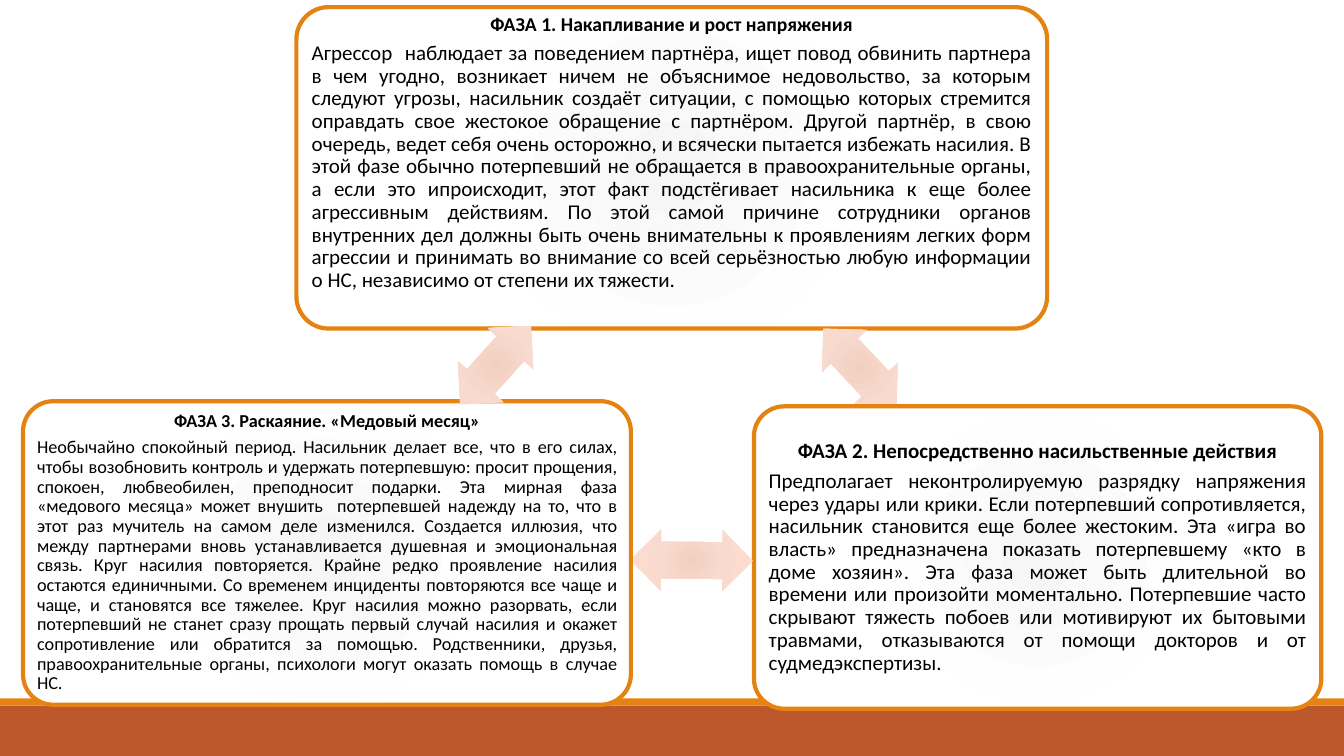
from lxml import etree
from pptx import Presentation
from pptx.dml.color import RGBColor
from pptx.enum import shapes, text
from pptx.oxml import ns
from pptx.util import Cm, Pt

THEME = {
    "font": "Calibri", "ink": "000000", "edge": "E48312", "base": "BD582C",
    "card": [(0, "F6F6F6"), (45, "FEFEFE"), (100, "FFFFFF")],
    "arrow": [(0, "F2D0C1"), (45, "F8DACE"), (100, "FDDDD0")],
    "line": 3,
    "sizes": {"build": (14, 15), "act": (15, 15), "calm": (13, 13)},
}
WIDE, HIGH = 33.87, 19.05
BARS = [("base", 17.78, 1.27), ("edge", 17.6, 0.18)]  # colour, top, height
THICK = 1.55  # arrow height

# Each phase: key, (left, top, width, height), (side inset, bottom inset), title, body
# Each arrow: centre x, centre y, length, angle; it follows its phase in the stack
CYCLE = [
    (("build", (7.47, 0.18, 18.92, 8.1), (0.15, 0.89),
      "ФАЗА 1. Накапливание и рост напряжения",
      "Агрессор  наблюдает за поведением партнёра, ищет повод обвинить партнера "
      "в чем угодно, возникает ничем не объяснимое недовольство, за которым "
      "следуют угрозы, насильник создаёт ситуации, с помощью которых стремится "
      "оправдать свое жестокое обращение с партнёром. Другой партнёр, в свою "
      "очередь, ведет себя очень осторожно, и всячески пытается избежать насилия. В "
      "этой фазе обычно потерпевший не обращается в правоохранительные органы, "
      "а если это ипроисходит, этот факт подстёгивает насильника к еще более "
      "агрессивным действиям. По этой самой причине сотрудники органов "
      "внутренних дел должны быть очень внимательны к проявлениям легких форм "
      "агрессии и принимать во внимание со всей серьёзностью любую информации о "
      "НС, независимо от степени их тяжести."),
     (21.67, 9.26, 2.69, 46.8)),
    (("act", (19, 10.24, 14.3, 7.62), (0.15, 0.15),
      "ФАЗА 2. Непосредственно насильственные действия",
      "Предполагает неконтролируемую разрядку напряжения "
      "через удары или крики. Если потерпевший сопротивляется, "
      "насильник становится еще более жестоким. Эта «игра во "
      "власть» предназначена показать потерпевшему «кто в "
      "доме хозяин». Эта фаза может быть длительной во "
      "времени или произойти моментально. Потерпевшие часто "
      "скрывают тяжесть побоев или мотивируют их бытовыми "
      "травмами, отказываются от помощи докторов и от "
      "судмедэкспертизы."),
     (17.43, 14.12, 3.1, 180.5)),
    (("calm", (0.58, 10.11, 15.32, 7.65), (0.13, 0.13),
      "ФАЗА 3. Раскаяние. «Медовый месяц»",
      "Необычайно спокойный период. Насильник делает все, что в его силах, "
      "чтобы возобновить контроль и удержать потерпевшую: просит прощения, "
      "спокоен, любвеобилен, преподносит подарки. Эта мирная фаза "
      "«медового месяца» может внушить  потерпевшей надежду на то, что в "
      "этот раз мучитель на самом деле изменился. Создается иллюзия, что "
      "между партнерами вновь устанавливается душевная и эмоциональная "
      "связь. Круг насилия повторяется. Крайне редко проявление насилия "
      "остаются единичными. Со временем инциденты повторяются все чаще и "
      "чаще, и становятся все тяжелее. Круг насилия можно разорвать, если "
      "потерпевший не станет сразу прощать первый случай насилия и окажет "
      "сопротивление или обратится за помощью. Родственники, друзья, "
      "правоохранительные органы, психологи могут оказать помощь в случае "
      "НС."),
     (12.49, 9.2, 2.67, 312)),
]


def tint(name):
    return RGBColor.from_string(THEME[name])


def add_form(slide, kind, box):
    form = slide.shapes.add_shape(kind, *map(Cm, box))
    form.shadow.inherit = False
    form.line.fill.background()
    form.fill.solid()
    return form


def glow(form, name):
    """Replace the solid fill with a round gradient."""
    old = form._element.spPr.find(ns.qn("a:solidFill"))
    grad = etree.Element(ns.qn("a:gradFill"), rotWithShape="1")
    stops = etree.SubElement(grad, ns.qn("a:gsLst"))
    for pos, hue in THEME[name]:
        stop = etree.SubElement(stops, ns.qn("a:gs"), pos=str(pos * 1000))
        etree.SubElement(stop, ns.qn("a:srgbClr"), val=hue)
    ring = etree.SubElement(grad, ns.qn("a:path"), path="circle")
    etree.SubElement(ring, ns.qn("a:fillToRect"),
                     {side: "100000" for side in "ltrb"})
    old.getparent().replace(old, grad)


def add_phase(slide, key, box, inset, title, body):
    card = add_form(slide, shapes.MSO_SHAPE.ROUNDED_RECTANGLE, box)
    card.adjustments[0] = 0.1
    glow(card, "card")
    card.line.color.rgb = tint("edge")
    card.line.width = Pt(THEME["line"])
    frame = card.text_frame
    frame.word_wrap = True
    frame.vertical_anchor = text.MSO_ANCHOR.MIDDLE
    side, base = map(Cm, inset)
    frame.margin_left = frame.margin_right = frame.margin_top = side
    frame.margin_bottom = base
    head, main = frame.paragraphs[0], frame.add_paragraph()
    big, small = THEME["sizes"][key]
    align = text.PP_ALIGN
    for para, words, size, way in ((head, title, big, align.CENTER),
                                   (main, body, small, align.JUSTIFY)):
        para.text = words
        para.alignment = way
        para.line_spacing = 0.9
        para.font.name = THEME["font"]
        para.font.size = Pt(size)
        para.font.bold = para is head
        para.font.color.rgb = tint("ink")
    head.space_after = Pt(round(big * 0.35, 1))


def add_arrow(slide, mid, level, length, angle):
    box = (mid - length / 2, level - THICK / 2, length, THICK)
    arrow = add_form(slide, shapes.MSO_SHAPE.LEFT_RIGHT_ARROW, box)
    arrow.adjustments[0], arrow.adjustments[1] = 0.6, 0.5
    arrow.rotation = angle
    glow(arrow, "arrow")


def main():
    deck = Presentation()
    deck.slide_width, deck.slide_height = Cm(WIDE), Cm(HIGH)
    slide = deck.slides.add_slide(deck.slide_layouts[6])
    for hue, top, height in BARS:
        bar = add_form(slide, shapes.MSO_SHAPE.RECTANGLE, (0, top, WIDE, height))
        bar.fill.fore_color.rgb = tint(hue)
    for phase, arrow in CYCLE:
        add_phase(slide, *phase)
        add_arrow(slide, *arrow)
    deck.save("out.pptx")


if __name__ == "__main__":
    main()
